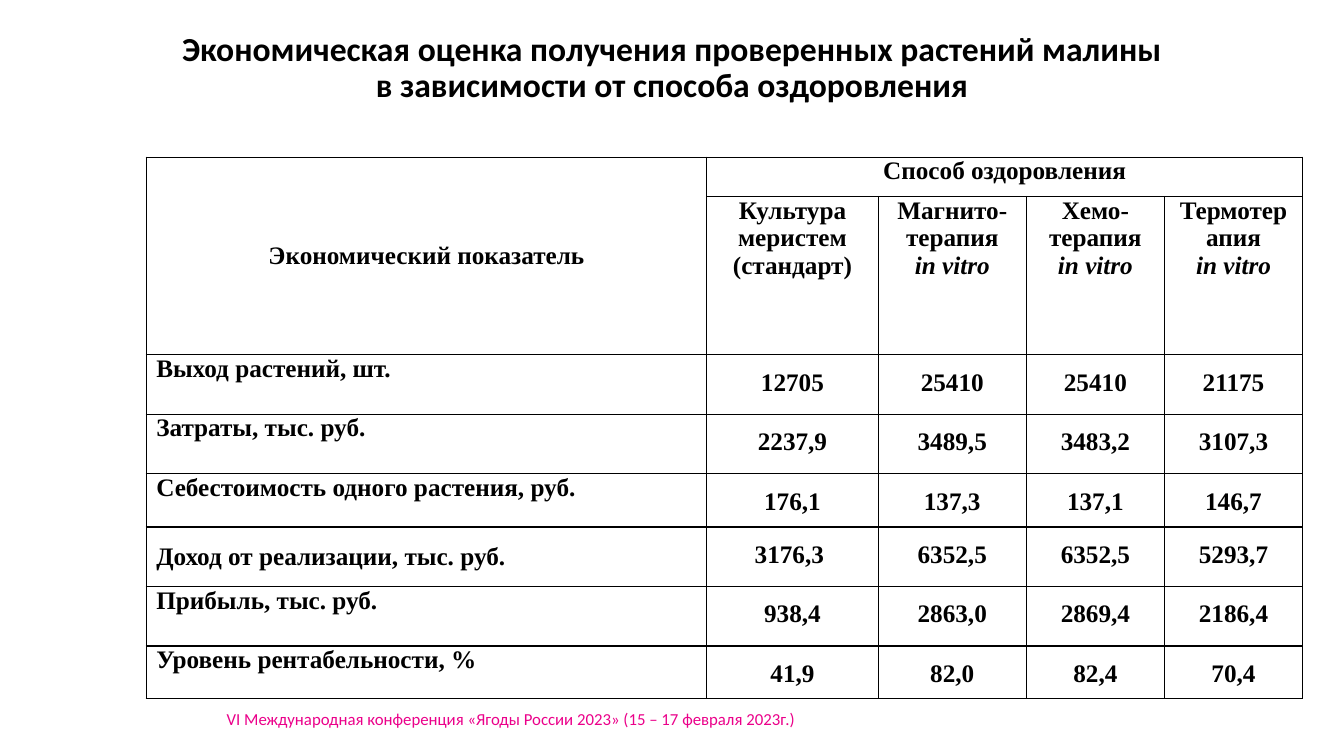
from dataclasses import dataclass

from lxml.etree import SubElement
from pptx import Presentation
from pptx.dml.color import RGBColor
from pptx.enum.text import MSO_ANCHOR as Anchor, PP_ALIGN as Align
from pptx.oxml.ns import qn
from pptx.util import Inches, Pt


@dataclass(frozen=True)
class Theme:
    ink: str = "000000"
    accent: str = "EB008A"
    sans: str = "Calibri"
    serif: str = "Times New Roman"
    title: int = 24
    body: int = 18
    footer: int = 12
    border: int = 1


THEME = Theme()

TITLE = ("Экономическая оценка получения проверенных растений малины\n"
         "в зависимости от способа оздоровления")
FOOTER = "VI Международная конференция «Ягоды России 2023» (15 – 17 февраля 2023г.)"

COLUMN_WIDTHS = [5.56, 1.7, 1.47, 1.37, 1.37]
ROW_HEIGHTS = [0.39, 1.57, 0.59, 0.59, 0.53, 0.59, 0.59, 0.52]
HEADER_ROWS = 2
ITALIC = "in vitro"
INCOME = "Доход от реализации, тыс. руб."
ROWS = [
    ["Экономический показатель", "Способ оздоровления", "", "", ""],
    ["", "Культура меристем (стандарт)", "Магнито-терапия\nin vitro",
     "Хемо-терапия\nin vitro", "Термотерапия\nin vitro"],
    ["Выход растений, шт.", "12705", "25410", "25410", "21175"],
    ["Затраты, тыс. руб.", "2237,9", "3489,5", "3483,2", "3107,3"],
    ["Себестоимость одного растения, руб.", "176,1", "137,3", "137,1", "146,7"],
    [INCOME, "3176,3 ", "6352,5", "6352,5", "5293,7"],
    ["Прибыль, тыс. руб.", "938,4", "2863,0", "2869,4", "2186,4"],
    ["Уровень рентабельности, %", "41,9", "82,0", "82,4", "70,4"],
]


def write(tf, text, font, size, color, bold=False, align=Align.LEFT, spacing=1.0):
    tf.text = text
    for p in tf.paragraphs:
        p.alignment = align
        p.line_spacing = spacing
        p.font.size = Pt(size)
        for r in p.runs:
            r.font.name = font
            r.font.size = Pt(size)
            r.font.bold = bold
            r.font.italic = r.text == ITALIC
            r.font.color.rgb = RGBColor.from_string(color)


def add_text(s, left, top, width, height, text, **style):
    box = s.shapes.add_textbox(Inches(left), Inches(top), Inches(width), Inches(height))
    tf = box.text_frame
    tf.word_wrap = True
    write(tf, text, **style)


def add_borders(cell):
    tc_pr = cell._tc.get_or_add_tcPr()
    for side in ("a:lnL", "a:lnR", "a:lnT", "a:lnB"):
        line = SubElement(tc_pr, qn(side), w=str(Pt(THEME.border)))
        fill = SubElement(line, qn("a:solidFill"))
        SubElement(fill, qn("a:srgbClr"), val=THEME.ink)


def format_cell(cell, text, row, col):
    is_value = row >= HEADER_ROWS and col > 0
    is_label = row >= HEADER_ROWS and col == 0
    cell.margin_left = cell.margin_right = Inches(0.1)
    cell.margin_top = cell.margin_bottom = 0
    is_middle = (row, col) == (0, 0) or text == INCOME
    cell.vertical_anchor = Anchor.MIDDLE if is_middle else Anchor.TOP
    write(cell.text_frame, text, THEME.serif, THEME.body, THEME.ink, bold=True,
          align=Align.LEFT if is_label else Align.CENTER,
          spacing=1.5 if is_value else 1.0)
    add_borders(cell)
    cell.fill.background()


def add_economics_table(s, left, top):
    frame = s.shapes.add_table(len(ROWS), len(COLUMN_WIDTHS), Inches(left), Inches(top),
                               Inches(sum(COLUMN_WIDTHS)), Inches(sum(ROW_HEIGHTS)))
    table = frame.table
    table.first_row = table.horz_banding = False
    for column, width in zip(table.columns, COLUMN_WIDTHS):
        column.width = Inches(width)
    for row, height in zip(table.rows, ROW_HEIGHTS):
        row.height = Inches(height)
    for i, texts in enumerate(ROWS):
        for j, text in enumerate(texts):
            format_cell(table.cell(i, j), text, i, j)
    # Header spans
    table.cell(0, 0).merge(table.cell(1, 0))
    table.cell(0, 1).merge(table.cell(0, 4))


def main():
    prs = Presentation()
    prs.slide_width, prs.slide_height = Inches(13.33), Inches(7.5)
    s = prs.slides.add_slide(prs.slide_layouts[6])

    # Conference footer
    add_text(s, 2.15, 6.98, 6.67, 0.3, FOOTER,
             font=THEME.sans, size=THEME.footer, color=THEME.accent)

    # Title
    add_text(s, 0, 0.27, 13.33, 1.57, TITLE, font=THEME.sans, size=THEME.title,
             color=THEME.ink, bold=True, align=Align.CENTER, spacing=0.9)

    # Economic indicators by treatment method
    add_economics_table(s, 1.45, 1.56)

    prs.save("out.pptx")


if __name__ == "__main__":
    main()
